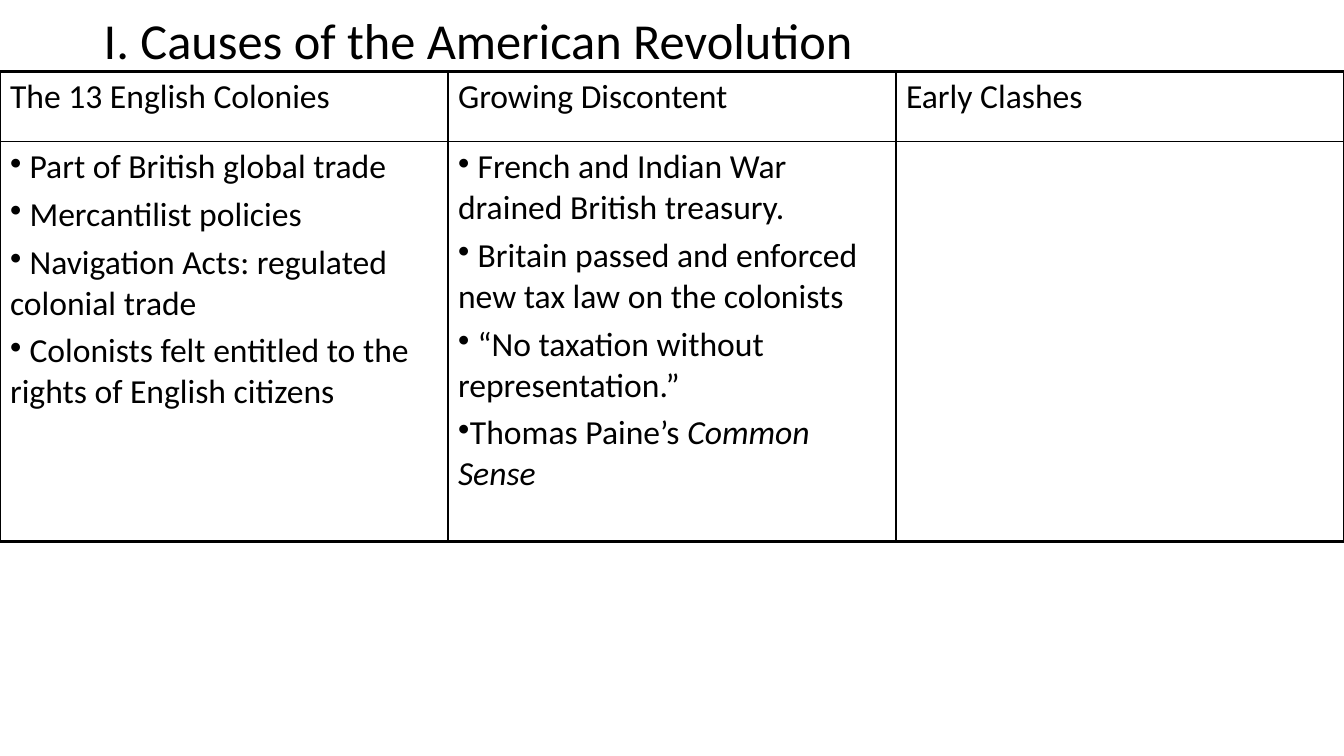
from lxml.etree import SubElement
from pptx import Presentation
from pptx.dml.color import RGBColor
from pptx.enum.text import MSO_ANCHOR, PP_ALIGN
from pptx.oxml import parse_xml
from pptx.oxml.ns import nsdecls, qn
from pptx.util import Cm, Pt

HEADINGS = ["The 13 English Colonies", "Growing Discontent", "Early Clashes"]
CAUSES = [
    [
        [" Part of British global trade"],
        [" Mercantilist policies"],
        [" Navigation Acts: regulated colonial trade"],
        [" Colonists felt entitled to the rights of English citizens"],
    ],
    [
        [" French and Indian War drained British treasury."],
        [" Britain passed and enforced new tax law on the colonists"],
        [" “No taxation without representation.”"],
        ["Thomas Paine’s ", ("Common Sense", True)],
    ],
    [],
]


def colour(value):
    return RGBColor.from_string(value)


class Slide:
    font = "Calibri"
    ink = "000000"
    title_size = 36
    body_size = 24
    outer_line = 2.25
    inner_line = 1

    def __init__(self, deck):
        self.page = deck.slides.add_slide(deck.slide_layouts[5])

    def add_span(self, para, text, size, italic=False):
        span = para.add_run()
        span.text = text
        span.font.name = self.font
        span.font.size = Pt(size)
        span.font.italic = italic
        span.font.color.rgb = colour(self.ink)

    def add_title(self, text, left, top, width, height):
        box = self.page.shapes.title
        box.left, box.top, box.width, box.height = Cm(left), Cm(top), Cm(width), Cm(height)
        frame = box.text_frame
        frame.vertical_anchor = MSO_ANCHOR.MIDDLE
        frame.margin_bottom = Cm(1.63)
        para = frame.paragraphs[0]
        para.alignment = PP_ALIGN.LEFT
        para.line_spacing = 0.9
        self.add_span(para, text, self.title_size)

    def fill_cell(self, cell, paragraphs, bulleted):
        for index, spans in enumerate(paragraphs):
            frame = cell.text_frame
            para = frame.add_paragraph() if index else frame.paragraphs[0]
            if bulleted:
                SubElement(para._p.get_or_add_pPr(), qn("a:buChar")).set("char", "•")
            if index:
                para.space_before = Pt(0.2 * self.body_size)
            for span in spans:
                text, italic = span if isinstance(span, tuple) else (span, False)
                self.add_span(para, text, self.body_size, italic)

    def set_borders(self, cell, outer_sides):
        properties = cell._tc.get_or_add_tcPr()
        for index, side in enumerate("LRTB"):
            weight = self.outer_line if side in outer_sides else self.inner_line
            properties.insert(index, parse_xml(
                f'<a:ln{side} {nsdecls("a")} w="{Pt(weight)}"><a:solidFill>'
                f'<a:srgbClr val="{self.ink}"/></a:solidFill></a:ln{side}>'
            ))

    def add_table(self, headings, columns, top, width, heights):
        count = len(headings)
        rows = [[[[heading]] for heading in headings], columns]
        table = self.page.shapes.add_table(
            len(rows), count, Cm(0), Cm(top), Cm(width), Cm(sum(heights))
        ).table
        table.first_row = False
        table.horz_banding = False
        for row, height in zip(table.rows, heights):
            row.height = Cm(height)
        for row_index, row in enumerate(rows):
            for column_index, paragraphs in enumerate(row):
                cell = table.cell(row_index, column_index)
                cell.fill.background()
                self.fill_cell(cell, paragraphs, bulleted=row_index > 0)
                outer_sides = "B" if row_index else "T"
                if column_index == 0:
                    outer_sides += "L"
                if column_index == count - 1:
                    outer_sides += "R"
                self.set_borders(cell, outer_sides)


def main():
    deck = Presentation()
    deck.slide_width, deck.slide_height = Cm(33.87), Cm(19.05)
    slide = Slide(deck)
    slide.add_title("I. Causes of the American Revolution", 2.36, 0, 29.21, 3.68)
    slide.add_table(HEADINGS, CAUSES, 1.8, 33.87, [1.77, 10.07])
    deck.save("out.pptx")


if __name__ == "__main__":
    main()
